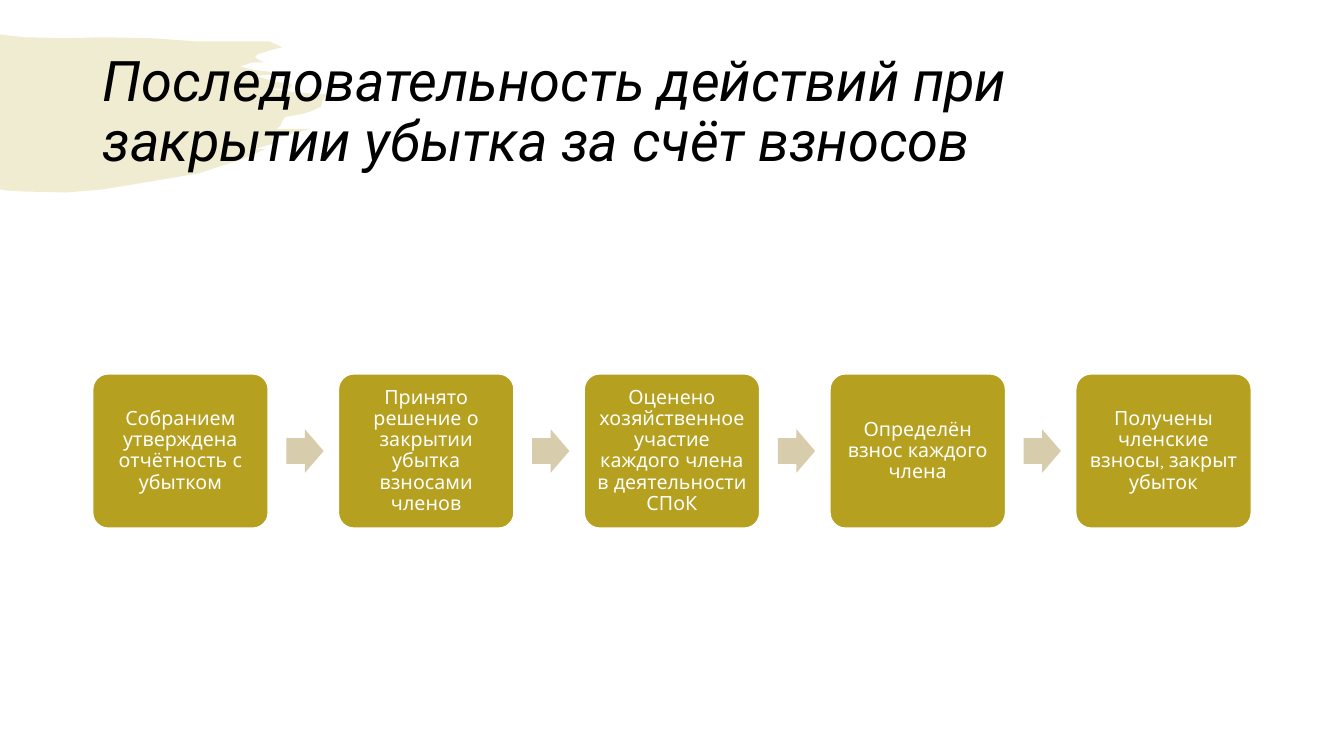
"""Build a slide with a five-step process for covering a loss."""
from lxml.etree import SubElement
from pptx import Presentation
from pptx.dml.color import RGBColor
from pptx.enum.shapes import MSO_SHAPE
from pptx.enum.text import MSO_ANCHOR, PP_ALIGN
from pptx.oxml.ns import qn
from pptx.util import Inches, Pt

TITLE = "Последовательность действий при закрытии убытка за счёт взносов"
STEPS = [
    "Собранием утверждена отчётность с убытком",
    "Принято решение о закрытии убытка взносами членов",
    "Оценено хозяйственное участие каждого члена в деятельности СПоК",
    "Определён взнос каждого члена",
    "Получены членские взносы, закрыт убыток",
]
COLORS = {"olive": "B5A020", "sand": "D7CDAC", "white": "FFFFFF", "black": "000000"}
BRUSH = [
    (0, 34), (6, 35), (25, 37), (66, 38), (102, 37), (151, 38), (194, 41),
    (248, 41), (267, 41), (280, 47), (271, 49), (255, 54), (253, 57), (256, 59),
    (262, 62), (250, 62), (238, 66), (246, 68), (256, 70), (266, 71), (275, 74),
    (251, 75), (263, 78), (273, 81), (280, 82), (288, 83), (290, 85), (287, 88),
    (284, 88), (263, 88), (296, 92), (330, 94), (321, 97), (318, 106), (307, 111),
    (300, 113), (283, 116), (280, 120), (278, 125), (274, 128), (308, 128),
    (269, 138), (273, 142), (252, 148), (263, 148), (240, 158), (197, 172),
    (150, 180), (102, 188), (65, 191), (23, 190), (7, 189), (0, 188),
]
WIDE, HIGH = 13.33, 7.5
LEFT, STEP, MID = 0.92, 2.4375, 4.475
BOX = (1.74, 1.53)
ARROW = (0.37, 0.43)
GAP = 0.18


def color(name):
    return RGBColor.from_string(COLORS[name])


def paint(shape, name):
    shape.shadow.inherit = False
    shape.fill.solid()
    shape.fill.fore_color.rgb = color(name)
    shape.line.fill.background()


def style(par, font, size, name, align):
    par.alignment = align
    par.line_spacing = 0.9
    par.font.name = font
    par.font.size = Pt(size)
    par.font.color.rgb = color(name)


def add_brush(slide):
    pen = slide.shapes.build_freeform(*BRUSH[0], scale=Inches(0.01))
    pen.add_line_segments(BRUSH[1:], close=True)
    shape = pen.convert_to_shape()
    paint(shape, "olive")
    tint = shape.fill._xPr.find(qn("a:solidFill"))[0]
    SubElement(tint, qn("a:alpha")).set("val", "20000")
    slide.shapes._spTree.insert(2, shape._element)


def add_title(slide):
    title = slide.shapes.title
    title.left, title.top = Inches(LEFT), Inches(0.4)
    title.width, title.height = Inches(11.5), Inches(1.45)
    frame = title.text_frame
    frame.text = TITLE
    frame.word_wrap = True
    frame.vertical_anchor = MSO_ANCHOR.MIDDLE
    style(frame.paragraphs[0], "Roboto", 40, "black", PP_ALIGN.LEFT)
    frame.paragraphs[0].font.italic = True


def add_part(slide, kind, left, size, name, *ratios):
    width, height = size
    shape = slide.shapes.add_shape(
        kind, Inches(left), Inches(MID - height / 2), Inches(width), Inches(height))
    paint(shape, name)
    for index, ratio in enumerate(ratios):
        shape.adjustments[index] = ratio
    return shape


def add_step(slide, left, text):
    box = add_part(slide, MSO_SHAPE.ROUNDED_RECTANGLE, left, BOX, "olive", 0.1)
    box.line.color.rgb = color("white")
    box.line.width = Pt(1)
    frame = box.text_frame
    frame.text = text
    frame.word_wrap = True
    frame.vertical_anchor = MSO_ANCHOR.MIDDLE
    frame.margin_left = frame.margin_right = Inches(0.06)
    frame.margin_top = frame.margin_bottom = Inches(0.06)
    style(frame.paragraphs[0], "Quicksand", 14, "white", PP_ALIGN.CENTER)


def main():
    deck = Presentation()
    deck.slide_width, deck.slide_height = Inches(WIDE), Inches(HIGH)
    slide = deck.slides.add_slide(deck.slide_layouts[5])
    add_brush(slide)
    add_title(slide)
    for index, text in enumerate(STEPS):
        left = LEFT + index * STEP
        add_step(slide, left, text)
        if index < len(STEPS) - 1:
            add_part(slide, MSO_SHAPE.RIGHT_ARROW, left + BOX[0] + GAP,
                     ARROW, "sand", 0.6, 0.5)
    deck.save("out.pptx")


if __name__ == "__main__":
    main()
